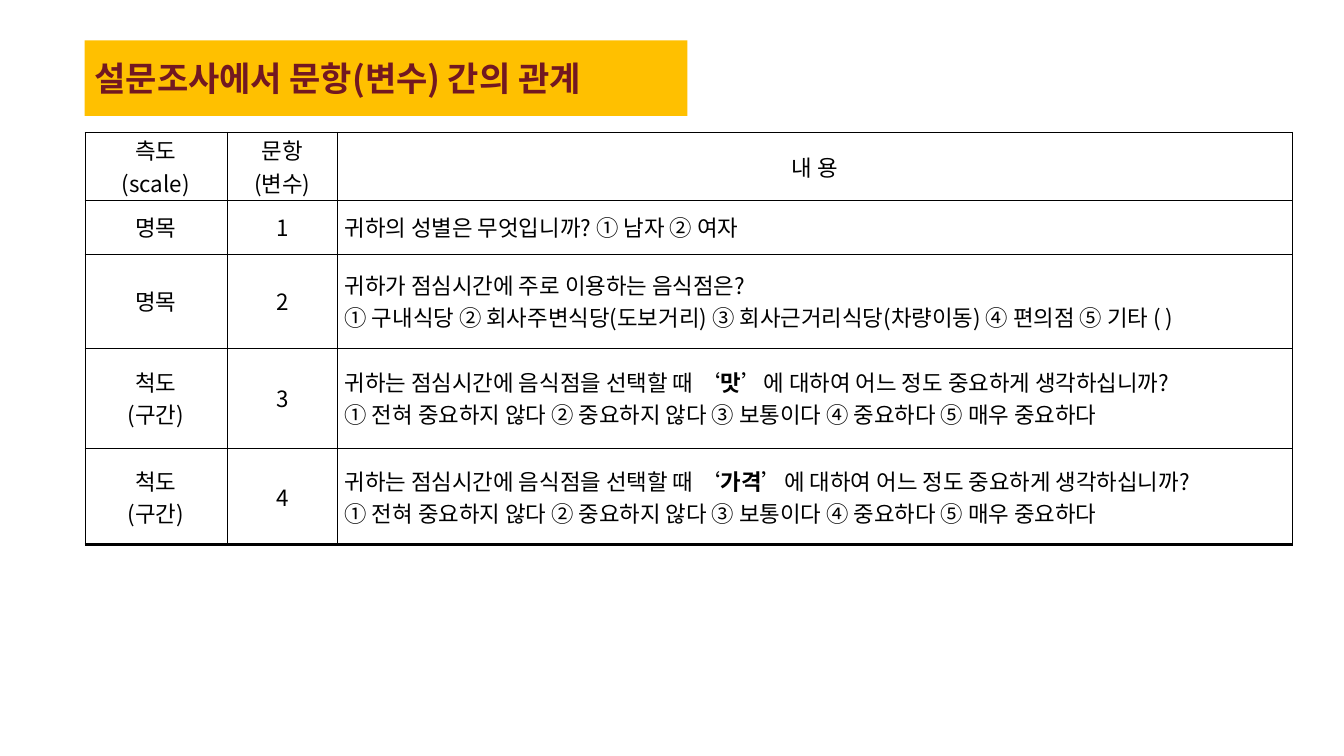
"""Build a slide that lists survey questions with their measurement scales."""
from dataclasses import dataclass

from lxml import etree
from pptx import Presentation
from pptx import util as u
from pptx.dml.color import RGBColor
from pptx.enum import text
from pptx.oxml.ns import qn

FONT = "Noto Sans CJK KR"
BLACK, GOLD, MAROON = "000000", "FFC000", "721821"
LEFT = 60.5
TABLE_TOP = 94.3
COLUMN_WIDTHS = (101.5, 79.2, 681.8)
THIN, THICK = 0.28, 1.98
RATING = "① 전혀 중요하지 않다 ② 중요하지 않다 ③ 보통이다 ④ 중요하다 ⑤ 매우 중요하다"


@dataclass(frozen=True)
class SurveyRow:
    """One table row; asterisks in the text enclose bold words."""
    height: float
    scale: str
    number: str
    content: str
    alignment: text.PP_ALIGN = text.PP_ALIGN.JUSTIFY


def importance(topic: str) -> str:
    """Return the rating question about one topic."""
    return f"귀하는 점심시간에 음식점을 선택할 때 ‘*{topic}*’에 대하여 어느 정도 중요하게 생각하십니까?\n{RATING}"


ROWS = (
    SurveyRow(43.9, "측도\n(scale)", "문항\n(변수)", "내 용", text.PP_ALIGN.CENTER),
    SurveyRow(38.2, "명목", "1", "귀하의 성별은 무엇입니까? ① 남자 ② 여자"),
    SurveyRow(67, "명목", "2", "귀하가 점심시간에 주로 이용하는 음식점은?\n"
              "① 구내식당 ② 회사주변식당(도보거리) ③ 회사근거리식당(차량이동) ④ 편의점 ⑤ 기타 ( )"),
    SurveyRow(72, "척도\n(구간)", "3", importance("맛")),
    SurveyRow(68.4, "척도\n(구간)", "4", importance("가격")),
)


def color(value: str) -> RGBColor:
    """Convert a hex string to a colour."""
    return RGBColor.from_string(value)


def apply(target, values: dict) -> None:
    """Set each named attribute on the target."""
    for name, value in values.items():
        setattr(target, name, value)


def write(frame, content: str, size: float, ink: str, alignment, bold: bool = False) -> None:
    """Fill a text frame, one paragraph for each line."""
    for index, line in enumerate(content.split("\n")):
        paragraph = frame.add_paragraph() if index else frame.paragraphs[0]
        paragraph.alignment = alignment
        for position, part in enumerate(line.split("*")):
            run = paragraph.add_run()
            run.text = part
            apply(run.font, {"name": FONT, "size": u.Pt(size), "bold": bold or position % 2 == 1})
            run.font.color.rgb = color(ink)
            east_asian = etree.Element(qn("a:ea"), typeface=FONT)
            run.font._element.find(qn("a:latin")).addnext(east_asian)


def add_borders(cell, bottom: float) -> None:
    """Draw black lines on the four sides of a cell."""
    properties = cell._tc.get_or_add_tcPr()
    for side, width in {"L": THIN, "R": THIN, "T": THIN, "B": bottom}.items():
        line = etree.SubElement(properties, qn(f"a:ln{side}"), w=str(u.Pt(width)))
        fill = etree.SubElement(line, qn("a:solidFill"))
        etree.SubElement(fill, qn("a:srgbClr"), val=BLACK)


def add_title(slide) -> None:
    """Place the title in its gold band."""
    shape = slide.shapes.title
    apply(shape, {"left": u.Pt(LEFT), "top": u.Pt(28.8), "width": u.Pt(430.6), "height": u.Pt(54)})
    shape.fill.solid()
    shape.fill.fore_color.rgb = color(GOLD)
    apply(shape.text_frame, {"vertical_anchor": text.MSO_ANCHOR.MIDDLE, "word_wrap": True,
                             "auto_size": text.MSO_AUTO_SIZE.NONE})
    write(shape.text_frame, "설문조사에서 문항(변수) 간의 관계", 24.3, MAROON, text.PP_ALIGN.LEFT, True)


def add_survey_table(slide) -> None:
    """Add the table of questions."""
    table = slide.shapes.add_table(
        len(ROWS), len(COLUMN_WIDTHS), u.Pt(LEFT), u.Pt(TABLE_TOP),
        u.Pt(sum(COLUMN_WIDTHS)), u.Pt(sum(row.height for row in ROWS))).table
    apply(table, {"first_row": False, "horz_banding": False})
    for column, width in zip(table.columns, COLUMN_WIDTHS):
        column.width = u.Pt(width)
    center = text.PP_ALIGN.CENTER
    for index, row in enumerate(ROWS):
        table.rows[index].height = u.Pt(row.height)
        bottom = THICK if row is ROWS[-1] else THIN
        entries = ((row.scale, center), (row.number, center), (row.content, row.alignment))
        for cell, (content, alignment) in zip(table.rows[index].cells, entries):
            apply(cell, {"margin_left": u.Pt(5), "margin_right": u.Pt(5),
                         "margin_top": u.Pt(1.4), "margin_bottom": u.Pt(1.4),
                         "vertical_anchor": text.MSO_ANCHOR.MIDDLE})
            add_borders(cell, bottom)
            cell.fill.background()
            write(cell.text_frame, content, 16, BLACK, alignment)


def main() -> None:
    """Create and save the presentation."""
    presentation = Presentation()
    apply(presentation, {"slide_width": u.Pt(960), "slide_height": u.Pt(540)})
    slide = presentation.slides.add_slide(presentation.slide_layouts[5])
    add_title(slide)
    add_survey_table(slide)
    presentation.save("out.pptx")


if __name__ == "__main__":
    main()
